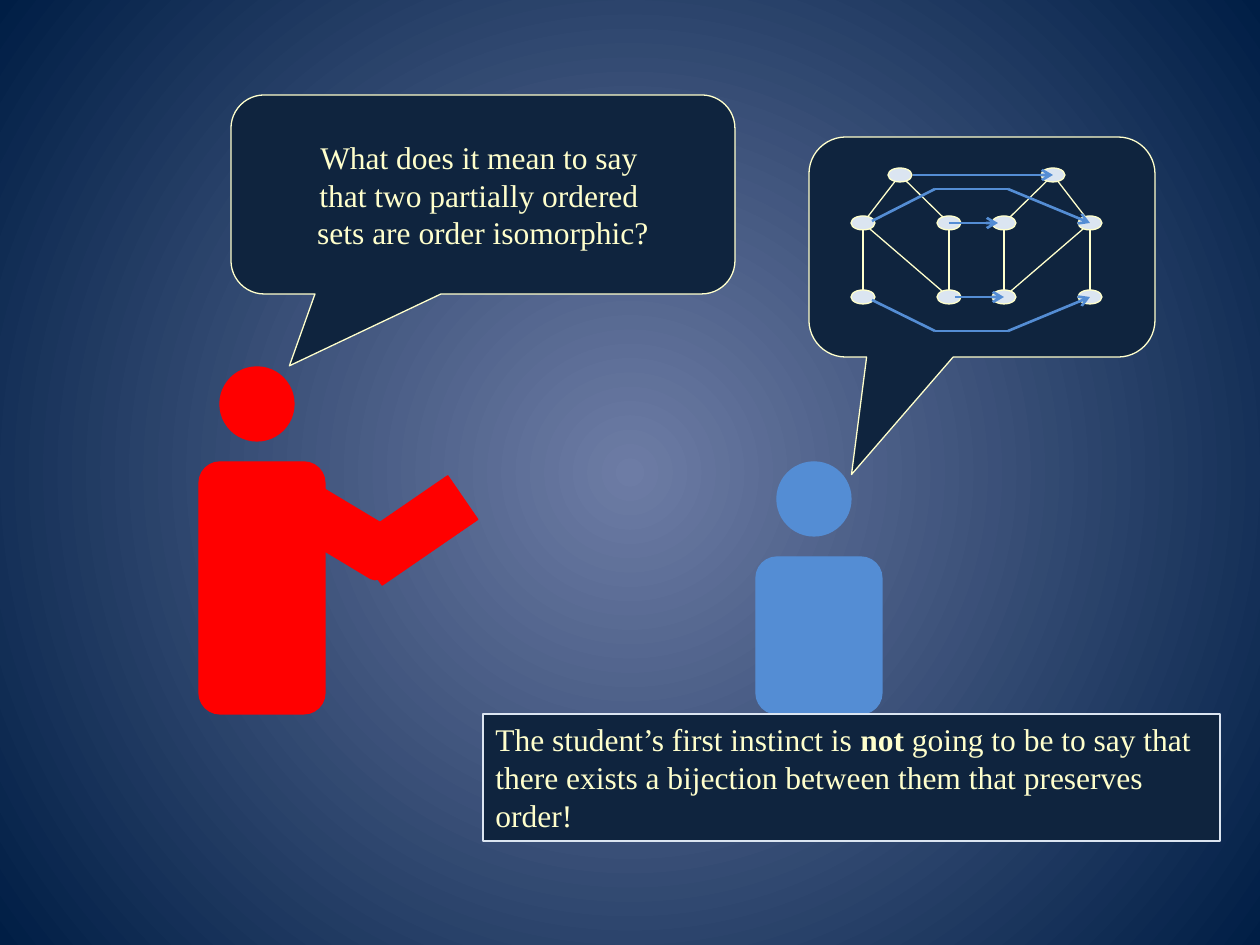
from lxml import etree
from pptx import Presentation
from pptx.dml.color import RGBColor
from pptx.enum.shapes import MSO_CONNECTOR, MSO_SHAPE
from pptx.enum.text import MSO_ANCHOR, MSO_AUTO_SIZE, PP_ALIGN
from pptx.oxml.ns import qn
from pptx.util import Emu, Pt

ROUNDED = MSO_SHAPE.ROUNDED_RECTANGLE
OVAL = MSO_SHAPE.OVAL
NODE = MSO_SHAPE.FLOWCHART_CONNECTOR
CALLOUT = MSO_SHAPE.ROUNDED_RECTANGULAR_CALLOUT
STRAIGHT = MSO_CONNECTOR.STRAIGHT
CENTER = PP_ALIGN.CENTER
MIDDLE = MSO_ANCHOR.MIDDLE
GROW = MSO_AUTO_SIZE.SHAPE_TO_FIT_TEXT

PX_PER_INCH = 126
COLORS = {
    "glow": "6D7CA5",
    "edge": "001E45",
    "teacher": "FF0000",
    "student": "548DD4",
    "panel": "0F243E",
    "cream": "FFFFCC",
    "pale": "DBE5F1",
}


def px(length):
    return Emu(round(length * 914400 / PX_PER_INCH))


def rgb(name):
    return RGBColor.from_string(COLORS[name])


class SlideBuilder:
    font_name = "Times New Roman"
    font_size = Pt(18)
    outline = Pt(0.75)
    arrow_width = Pt(1.5)

    def __init__(self, slide):
        self.slide = slide
        self.shapes = slide.shapes

    def background(self, inner, outer):
        fill = self.slide.background.fill
        fill.gradient()
        for stop, color in zip(fill.gradient_stops, (inner, outer)):
            stop.color.rgb = rgb(color)
        gradient = self.slide.element.find(".//" + qn("a:gradFill"))
        gradient.remove(gradient.find(qn("a:lin")))
        path = etree.SubElement(gradient, qn("a:path"), path="circle")
        etree.SubElement(path, qn("a:fillToRect"),
                         dict.fromkeys("ltrb", "50000"))

    def group(self):
        return self.slide.shapes.add_group_shape().shapes

    def paint(self, shape, fill, line):
        shape.fill.solid()
        shape.fill.fore_color.rgb = rgb(fill)
        shape.line.color.rgb = rgb(line)
        shape.line.width = self.outline

    def shape(self, kind, box, fill, line, parts=None, adjust=(), rotation=0):
        shape = (parts or self.shapes).add_shape(kind, *map(px, box))
        shape.shadow.inherit = False
        self.paint(shape, fill, line)
        for index, value in enumerate(adjust):
            shape.adjustments[index] = value
        shape.rotation = rotation
        return shape

    def line(self, start, end, color, width, parts=None, arrow=False):
        line = (parts or self.shapes).add_connector(
            STRAIGHT, *map(px, (*start, *end)))
        line.line.color.rgb = rgb(color)
        line.line.width = width
        if arrow:
            etree.SubElement(line.line._get_or_add_ln(), qn("a:tailEnd"),
                             type="arrow")
        etree.SubElement(line.element.spPr, qn("a:effectLst"))

    def route(self, points):
        """Arrow along the points, grouped when it has several segments."""
        parts = self.group() if len(points) > 2 else None
        for start, end in zip(points, points[1:]):
            self.line(start, end, "student", self.arrow_width, parts,
                      arrow=end == points[-1])

    def style(self, paragraph):
        paragraph.font.name = self.font_name
        paragraph.font.size = self.font_size
        paragraph.font.color.rgb = rgb("cream")

    def speech(self, box, tip, lines=()):
        bubble = self.shape(CALLOUT, box, "panel", "cream",
                            adjust=(*tip, 0.167))
        frame = bubble.text_frame
        frame.word_wrap = False
        frame.vertical_anchor = MIDDLE
        for index, text in enumerate(lines):
            paragraph = frame.add_paragraph() if index else frame.paragraphs[0]
            paragraph.text = text
            paragraph.alignment = CENTER
            self.style(paragraph)

    def note(self, box, runs):
        note = self.shapes.add_textbox(*map(px, box))
        self.paint(note, "panel", "pale")
        frame = note.text_frame
        frame.word_wrap = True
        frame.auto_size = GROW
        paragraph = frame.paragraphs[0]
        self.style(paragraph)
        for text, bold in runs:
            run = paragraph.add_run()
            run.text = text
            run.font.bold = bold


# Order diagram: nodes of the left set, mirrored to give the right set
LEFT_SET = {
    "top": (900, 175),
    "outer": (863, 223),
    "low inner": (949, 297),
    "inner": (949, 223),
    "low outer": (863, 297),
}
RELATIONS = [("low inner", "outer"), ("outer", "low outer"),
             ("low inner", "inner"), ("inner", "top"), ("top", "outer")]
MIRROR_SUM = 1953
NODE_W, NODE_H = 24, 14
RIGHT_SET = {name: (MIRROR_SUM - x, y) for name, (x, y) in LEFT_SET.items()}


def draw_posets(builder):
    parts = builder.group()
    for nodes in (LEFT_SET, RIGHT_SET):
        for lower, upper in RELATIONS:
            builder.line(nodes[lower], nodes[upper], "cream",
                         builder.outline, parts)
        for x, y in nodes.values():
            box = (x - NODE_W / 2, y - NODE_H / 2, NODE_W, NODE_H)
            builder.shape(NODE, box, "pale", "cream", parts)


def draw_person(builder, color, pieces):
    parts = builder.group()
    for kind, box, adjust, rotation in pieces:
        builder.shape(kind, box, color, color, parts, adjust, rotation)


def main():
    presentation = Presentation()
    presentation.slide_width, presentation.slide_height = px(1260), px(945)
    builder = SlideBuilder(
        presentation.slides.add_slide(presentation.slide_layouts[6]))
    builder.background("glow", "edge")

    # Teacher and student
    draw_person(builder, "teacher", [
        (ROUNDED, (284, 504, 116, 53), (0.167,), 31),
        (OVAL, (220, 367, 74, 74), (), 0),
        (ROUNDED, (357, 504, 116, 53), (0,), 325.5),
        (ROUNDED, (199, 462, 126, 252), (0.167,), 0),
    ])
    draw_person(builder, "student", [
        (OVAL, (777, 462, 74, 74), (), 0),
        (ROUNDED, (756, 557, 126, 157), (0.167,), 0),
    ])

    # Speech bubbles
    builder.speech((231, 95, 504, 199), (-0.384, 0.861), [
        "What does it mean to say ",
        "that two partially ordered ",
        "sets are order isomorphic?",
    ])
    builder.speech((809, 137, 346, 220), (-0.377, 1.034))

    # Two ordered sets and the map between them
    draw_posets(builder)
    for points in (
        [(913, 175), RIGHT_SET["top"]],
        [(872, 221), (935, 189), (1008, 189), RIGHT_SET["outer"]],
        [(955, 297), RIGHT_SET["low inner"]],
        [LEFT_SET["inner"], (998, 223)],
        [(872, 300), (935, 331), (1008, 331), RIGHT_SET["low outer"]],
    ):
        builder.route(points)

    # Remark
    builder.note((483, 714, 737, 127), [
        ("The student’s first instinct is ", None),
        ("not ", True),
        ("going to be to say that there exists a bijection between them "
         "that preserves order!", None),
    ])
    presentation.save("out.pptx")


if __name__ == "__main__":
    main()
